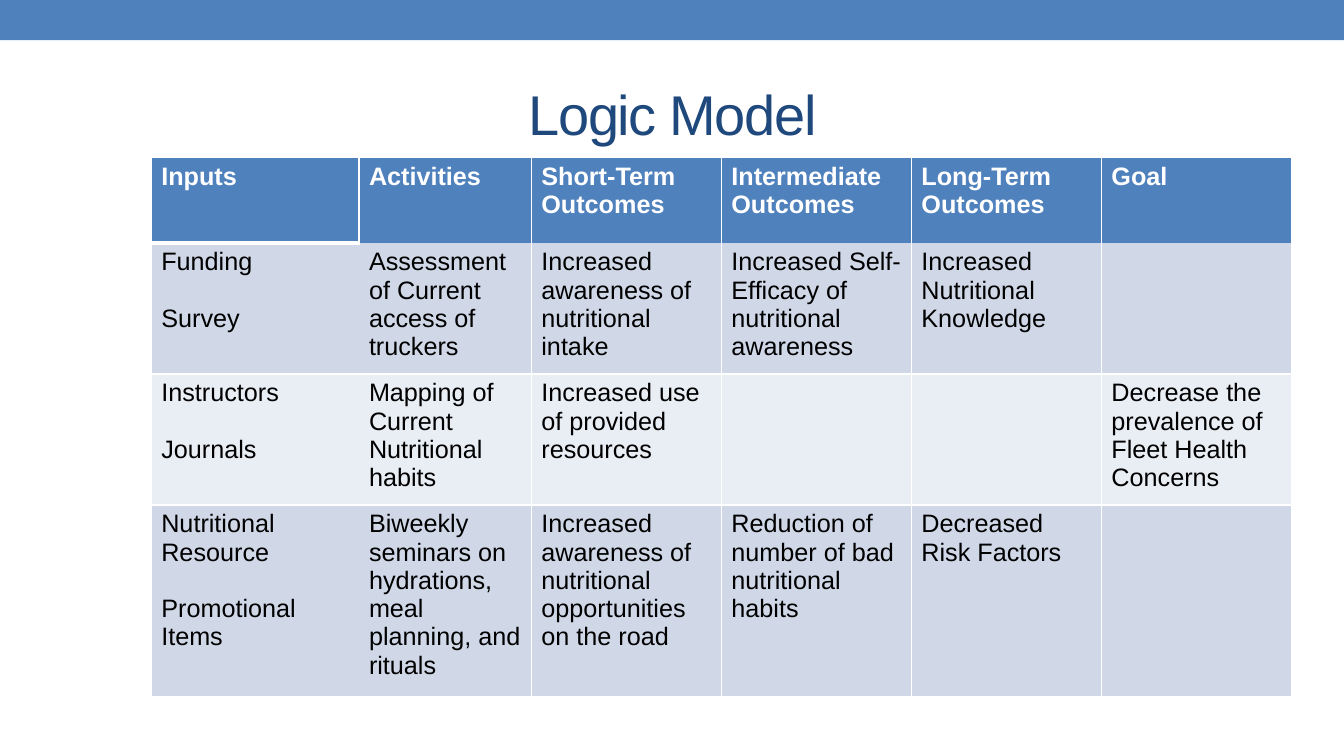
from lxml.etree import SubElement
from pptx import Presentation
from pptx.dml.color import RGBColor
from pptx.enum.shapes import MSO_SHAPE
from pptx.enum.text import MSO_ANCHOR, PP_ALIGN
from pptx.oxml.ns import qn
from pptx.util import Inches, Pt

BLUE = RGBColor(0x4F, 0x81, 0xBD)
NAVY = RGBColor(0x1F, 0x49, 0x7D)
WHITE = RGBColor(0xFF, 0xFF, 0xFF)
BLACK = RGBColor(0, 0, 0)
BAND_DARK = RGBColor(0xD0, 0xD8, 0xE8)
BAND_LIGHT = RGBColor(0xE9, 0xED, 0xF4)
FONT = "Arial"

COL_WIDTHS = [2.06, 1.71] + [1.885] * 4
ROW_HEIGHTS = [0.85, 1.3, 1.3, 1.9]
ROWS = [
    ["Inputs", "Activities", "Short-Term Outcomes", "Intermediate Outcomes",
     "Long-Term Outcomes", "Goal"],
    ["Funding\nSurvey", "Assessment of Current access of truckers",
     "Increased awareness of nutritional intake",
     "Increased Self-Efficacy of nutritional awareness",
     "Increased Nutritional Knowledge", ""],
    ["Instructors\nJournals", "Mapping of Current Nutritional habits",
     "Increased use of provided resources", "", "",
     "Decrease the prevalence of Fleet Health Concerns"],
    ["Nutritional Resource\nPromotional Items",
     "Biweekly seminars on hydrations, meal planning, and rituals",
     "Increased awareness of nutritional opportunities on the road",
     "Reduction of number of bad nutritional habits",
     "Decreased Risk Factors", ""],
]


def add_run(p, text, size, color, bold=False):
    r = p.add_run()
    r.text = text
    r.font.name = FONT
    r.font.size = Pt(size)
    r.font.bold = bold
    r.font.color.rgb = color
    return r


def add_band(s):
    band = s.shapes.add_shape(MSO_SHAPE.RECTANGLE, 0, 0, Inches(13.33), Inches(0.4))
    band.shadow.inherit = False
    band.fill.solid()
    band.fill.fore_color.rgb = BLUE
    band.line.fill.background()


def add_title(s, text):
    tb = s.shapes.add_textbox(Inches(0.67), Inches(0.58), Inches(12), Inches(1.08))
    tf = tb.text_frame
    tf.word_wrap = True
    tf.vertical_anchor = MSO_ANCHOR.MIDDLE
    p = tf.paragraphs[0]
    p.alignment = PP_ALIGN.CENTER
    r = add_run(p, text, 40, NAVY)
    r.font._element.set("spc", "-100")


def set_borders(cell, row, col):
    under_header = 3 if col == 0 else 0
    widths = {
        "a:lnL": 0 if row and col == 1 else 1,
        "a:lnR": 0 if row and col == 0 else 1,
        "a:lnT": under_header if row == 1 else 1,
        "a:lnB": under_header if row == 0 else 1,
    }
    tcPr = cell._tc.get_or_add_tcPr()
    for i, (tag, width) in enumerate(widths.items()):
        ln = SubElement(tcPr, qn(tag), w=str(Pt(width)))
        tcPr.insert(i, ln)
        if width:
            fill = SubElement(ln, qn("a:solidFill"))
            SubElement(fill, qn("a:srgbClr"), val=str(WHITE))
        else:
            SubElement(ln, qn("a:noFill"))


def fill_cell(cell, text, row, col):
    cell.fill.solid()
    cell.fill.fore_color.rgb = [BLUE, BAND_DARK, BAND_LIGHT, BAND_DARK][row]
    set_borders(cell, row, col)
    tf = cell.text_frame
    for i, line in enumerate(text.split("\n") if text else []):
        p = tf.add_paragraph() if i else tf.paragraphs[0]
        if i:
            p.space_before = Pt(20)
        add_run(p, line, 18, BLACK if row else WHITE, bold=row == 0)


def add_logic_table(s):
    frame = s.shapes.add_table(len(ROWS), len(COL_WIDTHS), Inches(1.5), Inches(1.56),
                               Inches(sum(COL_WIDTHS)), Inches(sum(ROW_HEIGHTS)))
    table = frame.table
    for column, width in zip(table.columns, COL_WIDTHS):
        column.width = Inches(width)
    for row, height in enumerate(ROW_HEIGHTS):
        table.rows[row].height = Inches(height)
        for col, text in enumerate(ROWS[row]):
            fill_cell(table.cell(row, col), text, row, col)


def main():
    prs = Presentation()
    prs.slide_width = Inches(13.33)
    prs.slide_height = Inches(7.5)
    s = prs.slides.add_slide(prs.slide_layouts[6])
    add_band(s)
    add_title(s, "Logic Model")
    add_logic_table(s)
    prs.save("out.pptx")


if __name__ == "__main__":
    main()
